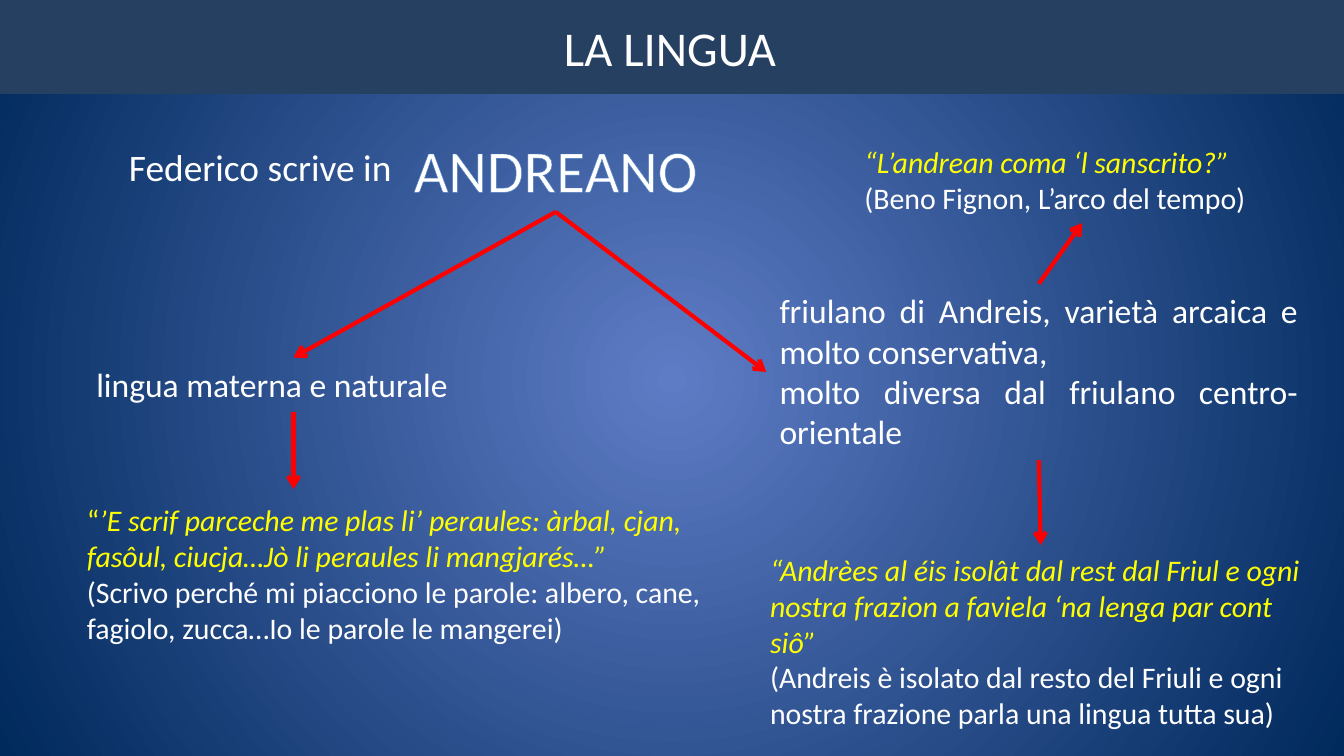
"""Build the slide on the language Federico writes in."""
from pptx import Presentation
from pptx.dml.color import RGBColor
from pptx.enum.shapes import MSO_CONNECTOR as Link, MSO_SHAPE as Shape
from pptx.enum.text import MSO_ANCHOR as Anchor, MSO_AUTO_SIZE as Auto, PP_ALIGN as Align
from pptx.oxml import parse_xml
from pptx.oxml.ns import nsdecls, qn
from pptx.util import Pt
from lxml.etree import SubElement as Sub


def tint(code):
    return RGBColor.from_string(code)


def note(box, paras, size, align=Align.LEFT, wrap=True):
    shape = slide.shapes.add_textbox(*map(Pt, box))
    frame = shape.text_frame
    frame.word_wrap = wrap
    frame.auto_size = Auto.SHAPE_TO_FIT_TEXT
    for i, runs in enumerate(paras):
        para = frame.add_paragraph() if i else frame.paragraphs[0]
        para.alignment = align
        for text, color, slant in runs:
            run = para.add_run()
            run.text = text
            form = {"name": "Calibri", "size": Pt(size), "italic": slant}
            for key, value in form.items():
                setattr(run.font, key, value)
            run.font.color.rgb = tint(color)
    return shape


WHITE, GOLD, RED = "FFFFFF", "FFFF00", "FF0000"

deck = Presentation()
deck.slide_width, deck.slide_height = Pt(720), Pt(405)
slide = deck.slides.add_slide(deck.slide_layouts[6])

fill = slide.background.fill
fill.gradient()
for stop, color, place in zip(fill.gradient_stops, ("5E7CC5", "00295C"), (0, 1)):
    stop.color.rgb = tint(color)
    stop.position = place
grad = slide.element.find(".//" + qn("a:gradFill"))
grad.replace(grad.find(qn("a:lin")), parse_xml(
    f'<a:path {nsdecls("a")} path="circle">'
    '<a:fillToRect l="50000" t="50000" r="50000" b="50000"/></a:path>'))

band = slide.shapes.add_shape(Shape.RECTANGLE, 0, 0, Pt(720), Pt(50.4))
band.shadow.inherit = False
band.fill.solid()
band.fill.fore_color.rgb = tint("254061")
band.line.fill.background()

title = note((34, 0, 650, 50.4), [[("LA LINGUA", WHITE, False)]], 26, Align.CENTER)
title.text_frame.auto_size = Auto.NONE
title.text_frame.vertical_anchor = Anchor.MIDDLE

note((62, 73.5, 264, 31.5), [[("Federico scrive in", WHITE, False)]], 20)
name = note((214, 67.5, 167.5, 46), [[("ANDREANO", WHITE, False)]], 32, Align.CENTER, False)
edge = parse_xml(
    f'<a:ln {nsdecls("a")} w="10160"><a:solidFill><a:srgbClr val="4F81BD"/>'
    '</a:solidFill></a:ln>')
name.text_frame.paragraphs[0].runs[0].font._element.insert(0, edge)

local = note((410.5, 152, 292, 94.5), [
    [("friulano di Andreis, varietà arcaica e molto conservativa,", WHITE, False)],
    [("molto diversa dal friulano centro-orientale", WHITE, False)],
], 18, Align.JUSTIFY)
mother = note((44.5, 191.5, 225.5, 29), [[("lingua materna e naturale", WHITE, False)]], 18)
quote = note((456, 73.5, 247.5, 46), [
    [("“L’andrean coma ‘l sanscrito?”", GOLD, True)],
    [("(Beno Fignon, L’arco del tempo)", WHITE, False)],
], 16)
note((39.5, 265.5, 360, 108.5), [
    [("“", GOLD, False),
     ("’E scrif parceche me plas li’ peraules: àrbal, cjan, fasôul, ciucja…"
      "Jò li peraules li mangjarés…”", GOLD, True)],
    [("(Scrivo perché mi piacciono le parole: albero, cane, fagiolo, zucca…"
      "Io le parole le mangerei)", WHITE, False)],
], 16)
far = note((405.5, 292, 304, 104.5), [
    [("“Andrèes al éis isolât dal rest dal Friul e ogni nostra frazion a faviela "
      "‘na lenga par cont siô”", GOLD, True)],
    [("(Andreis è isolato dal resto del Friuli e ogni nostra frazione parla una "
      "lingua tutta sua)", WHITE, False)],
], 16)

for start, out, end, into in (
    (name, 2, local, 1),
    (name, 2, mother, 0),
    (local, 0, quote, 2),
    (mother, 2, None, 0),
    (local, 2, far, 0),
):
    line = slide.shapes.add_connector(
        Link.STRAIGHT, Pt(157.25), Pt(220.5), Pt(157.25), Pt(262))
    line.begin_connect(start, out)
    if end:
        line.end_connect(end, into)
    line.line.width = Pt(2.25)
    line.line.color.rgb = tint(RED)
    props = line._element.spPr
    Sub(props.find(qn("a:ln")), qn("a:tailEnd"), type="arrow")
    Sub(props, qn("a:effectLst"))

deck.save("out.pptx")
